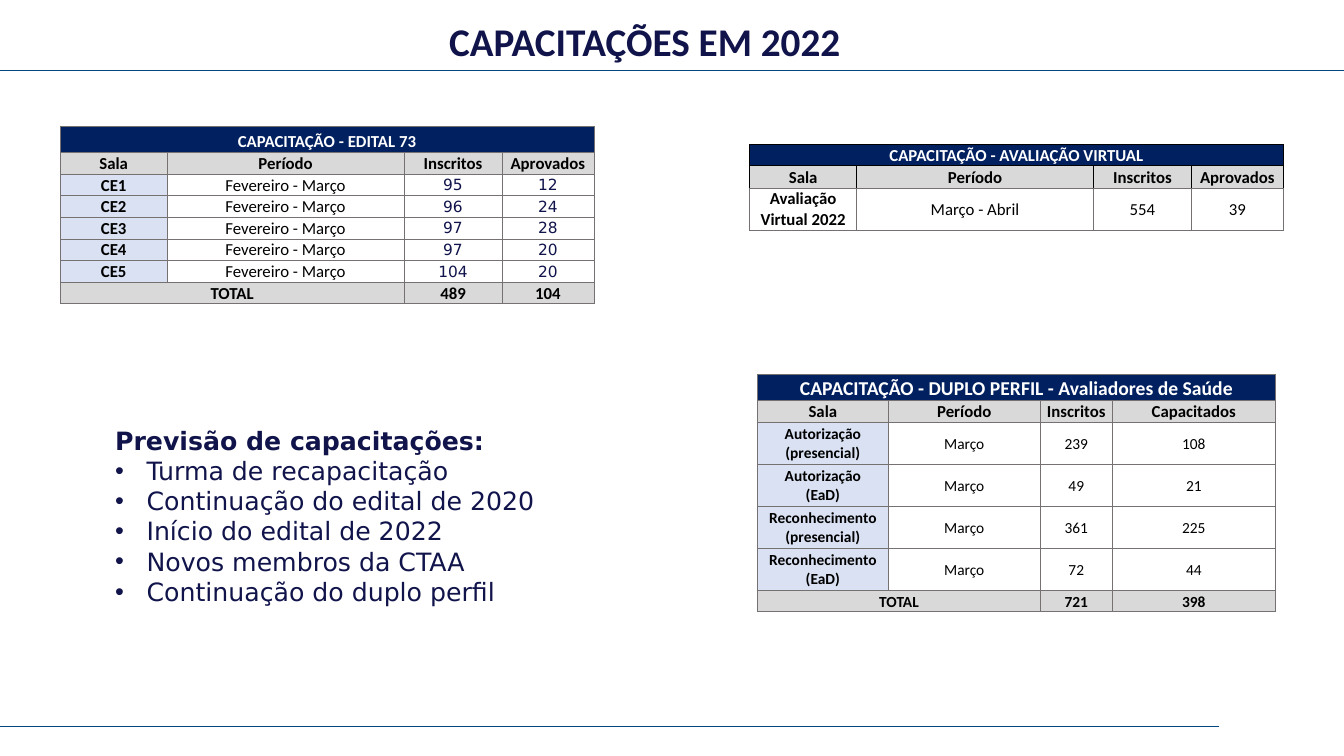
from dataclasses import dataclass

from lxml.etree import SubElement
from pptx import Presentation
from pptx.dml.color import RGBColor
from pptx.enum.shapes import MSO_CONNECTOR
from pptx.enum.text import MSO_ANCHOR as Anchor, MSO_AUTO_SIZE as AutoSize, PP_ALIGN as Align
from pptx.oxml.ns import qn
from pptx.util import Pt

COLORS = {
    "navy": "11144B", "rule": "044785", "banner": "002060", "header": "D9D9D9",
    "label": "D9E1F2", "white": "FFFFFF", "black": "000000", "grid": "757171",
}
HEADING, PLAIN = "Calibri", "DejaVu Sans"


@dataclass
class Course:
    title: str
    headers: list
    rows: list
    columns: list
    heights: list
    total: list = None
    title_size: int = 12
    body_size: int = 12
    label_fill: str = "label"
    top_grid: str = "grid"
    figure_style: tuple = None


def rgb(name):
    return RGBColor.from_string(COLORS[name])


def set_font(para, name, size, color, bold=False):
    font = para.font
    font.name, font.size, font.bold = name, Pt(size), bold
    font.color.rgb = rgb(color)


def place(shape, box):
    shape.left, shape.top, shape.width, shape.height = map(Pt, box)


def add_rule(page, top, width):
    line = page.shapes.add_connector(MSO_CONNECTOR.STRAIGHT, 0, Pt(top), Pt(width), Pt(top))
    line.line.color.rgb = rgb("rule")
    line.line.width = Pt(0.5)
    SubElement(line._element.spPr, qn("a:effectLst"))


def add_title(page, box, text):
    title = page.shapes.title
    place(title, box)
    frame = title.text_frame
    frame.text = text
    frame.auto_size = AutoSize.NONE
    frame.vertical_anchor = Anchor.MIDDLE
    para = frame.paragraphs[0]
    para.alignment, para.line_spacing = Align.CENTER, 0.9
    set_font(para, HEADING, 28, "navy", True)


def add_forecast(page, box, heading, items):
    body = page.placeholders[1]
    place(body, box)
    frame = body.text_frame
    frame.text = "\n".join([heading, *items])
    frame.auto_size = AutoSize.NONE
    frame.vertical_anchor = Anchor.TOP
    for index, para in enumerate(frame.paragraphs):
        para.space_before = Pt(0)
        props = para._p.get_or_add_pPr()
        indent = Pt(22.5) if index else 0
        props.set("marL", str(indent))
        props.set("indent", str(-indent))
        if index:
            SubElement(props, qn("a:buFont"), typeface="Arial")
            SubElement(props, qn("a:buChar"), char="•")
        else:
            SubElement(props, qn("a:buNone"))
        set_font(para, PLAIN, 18, "navy", bold=index == 0)


def add_borders(cell, color):
    props = cell._tc.get_or_add_tcPr()
    for side in ("lnL", "lnR", "lnT", "lnB"):
        line = SubElement(props, qn(f"a:{side}"), w=str(Pt(0.5)))
        SubElement(SubElement(line, qn("a:solidFill")), qn("a:srgbClr"), val=COLORS[color])


def format_cell(cell, text, style, fill, grid, anchor=Anchor.BOTTOM):
    """Write one cell; style holds font name, size, colour and bold."""
    cell.text = text
    cell.margin_left = cell.margin_right = cell.margin_top = Pt(0.7)
    cell.margin_bottom = 0
    cell.vertical_anchor = anchor
    add_borders(cell, grid)
    if fill:
        cell.fill.solid()
        cell.fill.fore_color.rgb = rgb(fill)
    else:
        cell.fill.background()
    for para in cell.text_frame.paragraphs:
        para.alignment = Align.CENTER
        set_font(para, *style)


def add_course_table(page, left, top, course):
    count = len(course.columns)
    texts = [[course.title] + [""] * (count - 1), course.headers, *course.rows]
    if course.total:
        texts.append(["TOTAL", "", *course.total])
    table = page.shapes.add_table(len(texts), count, Pt(left), Pt(top),
                                  Pt(sum(course.columns)), Pt(sum(course.heights))).table
    table.first_row = table.horz_banding = False
    for column, width in zip(table.columns, course.columns):
        column.width = Pt(width)
    for row, height in zip(table.rows, course.heights):
        row.height = Pt(height)

    size = course.body_size
    bold = (HEADING, size, "black", True)
    regular = (HEADING, size, "black", False)
    for r, row in enumerate(texts):
        for c, text in enumerate(row):
            cell = table.cell(r, c)
            if r == 0:
                style = (HEADING, course.title_size, "white", True)
                format_cell(cell, text, style, "banner", course.top_grid)
            elif r == 1:
                format_cell(cell, text, (HEADING, 12, "black", True), "header", course.top_grid)
            elif r == len(course.rows) + 2:
                format_cell(cell, text, bold, "header", "grid")
            elif c == 0:
                format_cell(cell, text, bold, course.label_fill, "grid", Anchor.MIDDLE)
            else:
                style = course.figure_style if c > 1 and course.figure_style else regular
                format_cell(cell, text, style, None, "grid", Anchor.MIDDLE)
    table.cell(0, 0).merge(table.cell(0, count - 1))
    if course.total:
        last = len(texts) - 1
        table.cell(last, 0).merge(table.cell(last, 1))


HEADERS = ["Sala", "Período", "Inscritos", "Aprovados"]
WIDE_COLUMNS = [76.4, 169.2, 70, 65.6]

NOTICE_73 = Course(
    "CAPACITAÇÃO - EDITAL 73", HEADERS,
    [[room, "Fevereiro - Março", enrolled, passed] for room, enrolled, passed in (
        ("CE1", "95", "12"), ("CE2", "96", "24"), ("CE3", "97", "28"),
        ("CE4", "97", "20"), ("CE5", "104", "20"))],
    WIDE_COLUMNS, [18.7, 15.8] + [15.4] * 6, total=["489", "104"],
    figure_style=(PLAIN, 11, "navy", False))

VIRTUAL = Course(
    "CAPACITAÇÃO - AVALIAÇÃO VIRTUAL", HEADERS,
    [["Avaliação Virtual 2022", "Março - Abril", "554", "39"]],
    WIDE_COLUMNS, [15.4, 15.8, 30.2], label_fill=None, top_grid="black")

DOUBLE_PROFILE = Course(
    "CAPACITAÇÃO - DUPLO PERFIL - Avaliadores de Saúde",
    HEADERS[:3] + ["Capacitados"],
    [[f"{kind}\v({mode})", "Março", enrolled, trained] for kind, mode, enrolled, trained in (
        ("Autorização", "presencial", "239", "108"), ("Autorização", "EaD", "49", "21"),
        ("Reconhecimento", "presencial", "361", "225"), ("Reconhecimento", "EaD", "72", "44"))],
    [93.2, 108.8, 51.3, 116.7], [18.7, 15.8] + [30] * 4 + [15],
    total=["721", "398"], title_size=14, body_size=11)


def main():
    deck = Presentation()
    deck.slide_width, deck.slide_height = Pt(960), Pt(540)
    page = deck.slides.add_slide(deck.slide_layouts[1])
    add_rule(page, 519, 870.5)
    add_rule(page, 50.4, 960)
    add_title(page, (27, 13, 867, 37), "CAPACITAÇÕES EM 2022")
    add_course_table(page, 43, 90, NOTICE_73)
    add_course_table(page, 535.5, 103, VIRTUAL)
    add_course_table(page, 541.2, 267.3, DOUBLE_PROFILE)
    add_forecast(page, (75, 300, 340.5, 138), "Previsão de capacitações:", [
        "Turma de recapacitação", "Continuação do edital de 2020",
        "Início do edital de 2022", "Novos membros da CTAA",
        "Continuação do duplo perfil"])
    deck.save("out.pptx")


if __name__ == "__main__":
    main()
